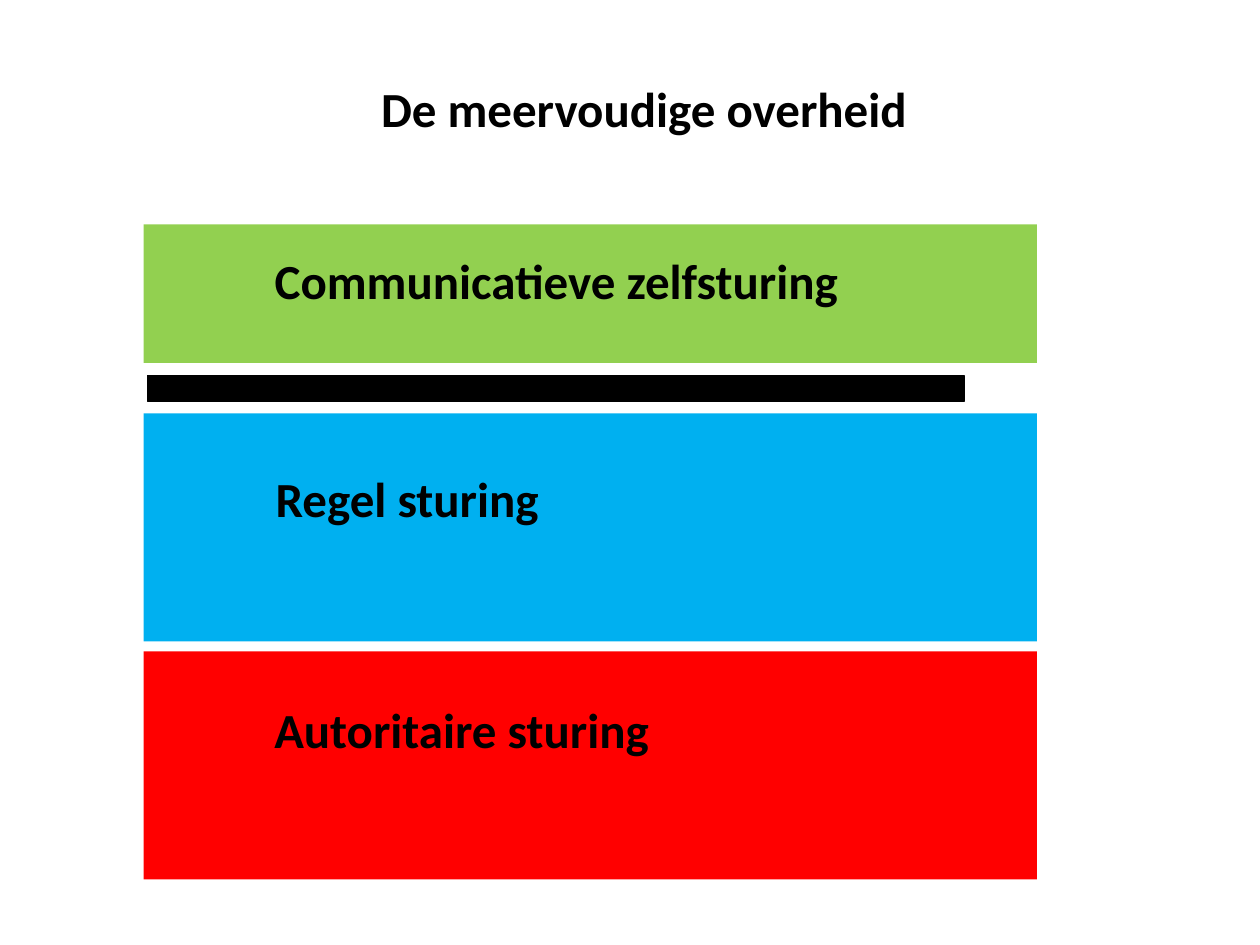
from pptx import Presentation
from pptx.dml.color import RGBColor
from pptx.enum.shapes import MSO_SHAPE as Shape
from pptx.enum.text import MSO_ANCHOR as Anchor, MSO_AUTO_SIZE as AutoSize, PP_ALIGN as Align
from pptx.util import Pt

COLORS = {
    "text": "000000",
    "divider": "000000",
    "communicative": "92D050",
    "rules": "00B0F0",
    "authoritarian": "FF0000",
}
BAND_LEFT, BAND_WIDTH = 82, 510.5
LABEL_HEIGHT = 41

# text, colour, band top and height, label offset and width, alignment, wrapping
BANDS = [
    ("Communicatieve zelfsturing", "communicative", 128.2, 79.2,
     (28.8, 11.5), 414, Align.CENTER, True),
    ("Regel sturing", "rules", 236.2, 130.3,
     (68.4, 28), 166.3, Align.LEFT, False),
    ("Autoritaire sturing", "authoritarian", 372.2, 130.3,
     (67.7, 23.8), 231, Align.LEFT, False),
]


def color(name):
    return RGBColor.from_string(COLORS[name])


def write(frame, text, *, size=28, bold=True, align=Align.LEFT, wrap=True,
          auto_size=AutoSize.SHAPE_TO_FIT_TEXT):
    frame.word_wrap = wrap
    frame.auto_size = auto_size
    frame.vertical_anchor = Anchor.TOP
    paragraph = frame.paragraphs[0]
    paragraph.alignment = align
    run = paragraph.add_run()
    run.text = text
    run.font.name = "Calibri"
    run.font.size = Pt(size)
    run.font.bold = bold
    run.font.color.rgb = color("text")


def add_block(slide, kind, box, fill):
    block = slide.shapes.add_shape(kind, *map(Pt, box))
    block.shadow.inherit = False
    block.fill.solid()
    block.fill.fore_color.rgb = color(fill)
    block.line.fill.background()
    return block


def add_title(slide, box):
    title = slide.shapes.title
    title.left, title.top, title.width, title.height = map(Pt, box)
    write(title.text_frame, "De meervoudige overheid", align=Align.CENTER,
          auto_size=AutoSize.NONE)


def add_divider(slide, box):
    divider = add_block(slide, Shape.MATH_MINUS, box, "divider")
    divider.line.color.rgb = color("divider")
    divider.line.width = Pt(0.75)


def add_band(slide, box, text, fill, offset, label_width, align, wrap):
    add_block(slide, Shape.RECTANGLE, box, fill)
    left, top = box[0] + offset[0], box[1] + offset[1]
    label = slide.shapes.add_textbox(Pt(left), Pt(top), Pt(label_width), Pt(LABEL_HEIGHT))
    write(label.text_frame, text, align=align, wrap=wrap)


def main():
    deck = Presentation()
    deck.slide_width, deck.slide_height = Pt(720), Pt(540)
    slide = deck.slides.add_slide(deck.slide_layouts[5])
    add_title(slide, (97.2, 41, 541.4, 85))
    add_divider(slide, (0, 190.8, 635, 62.6))
    for text, fill, top, height, *label_format in BANDS:
        add_band(slide, (BAND_LEFT, top, BAND_WIDTH, height), text, fill, *label_format)
    deck.save("out.pptx")


if __name__ == "__main__":
    main()
